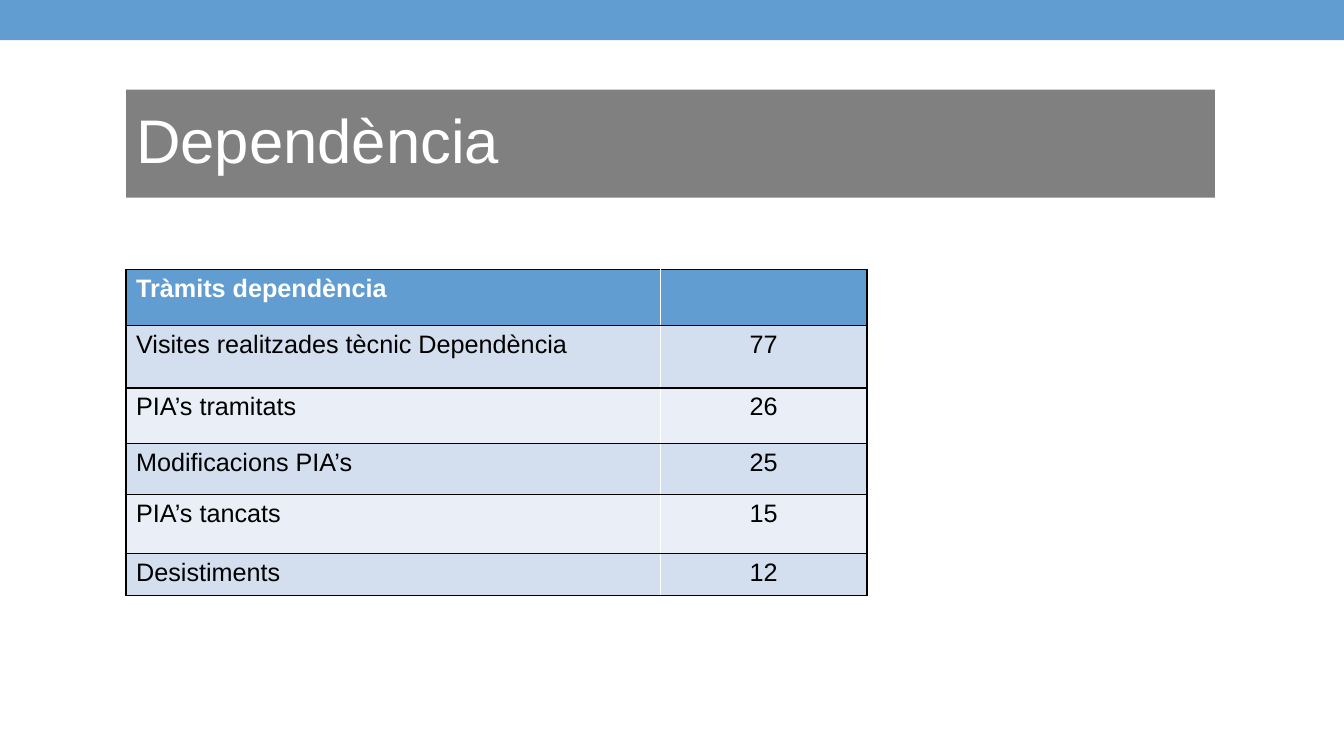
from lxml import etree
from pptx import Presentation
from pptx.dml.color import RGBColor
from pptx.enum.shapes import MSO_SHAPE
from pptx.enum.text import MSO_ANCHOR, PP_ALIGN
from pptx.oxml.ns import qn
from pptx.util import Inches, Pt

RECTANGLE = MSO_SHAPE.RECTANGLE
MIDDLE = MSO_ANCHOR.MIDDLE
LEFT, CENTER = PP_ALIGN.LEFT, PP_ALIGN.CENTER

FONT = "Arial"
BLUE, GRAY, WHITE, BLACK = "629DD1", "808080", "FFFFFF", "000000"
BANDS = ("EAEFF7", "D3DFEE")
COLUMN_WIDTHS = (5.3, 2.05)
ROW_HEIGHTS = (0.56, 0.62, 0.55, 0.51, 0.58, 0.42)
ROWS = (
    ("Tràmits dependència", ""),
    ("Visites realitzades tècnic Dependència", "77"),
    ("PIA’s tramitats", "26"),
    ("Modificacions PIA’s", "25"),
    ("PIA’s tancats", "15"),
    ("Desistiments", "12"),
)


def color(value):
    """Turn a hex string into a colour."""
    return RGBColor.from_string(value)


def paint(target, value):
    """Give a shape or cell a solid fill."""
    target.fill.solid()
    target.fill.fore_color.rgb = color(value)


def style_font(paragraph, size, value, bold=False):
    """Set the font of a paragraph."""
    font = paragraph.font
    font.name, font.size, font.bold = FONT, Pt(size), bold
    font.color.rgb = color(value)


def place(shape, box):
    """Move a shape to a box of left, top, width and height in inches."""
    shape.left, shape.top, shape.width, shape.height = map(Inches, box)


def add_band(page, box):
    """Draw the coloured band across the page."""
    band = page.shapes.add_shape(RECTANGLE, *map(Inches, box))
    band.shadow.inherit = False
    paint(band, BLUE)
    band.line.fill.background()


def fill_title(page, box, text):
    """Place and format the title."""
    title = page.shapes.title
    place(title, box)
    paint(title, GRAY)
    frame = title.text_frame
    frame.text = text
    frame.word_wrap = True
    frame.vertical_anchor = MIDDLE
    paragraph = frame.paragraphs[0]
    paragraph.alignment = LEFT
    paragraph.line_spacing = 0.9
    style_font(paragraph, 44, WHITE)


def set_borders(cell, sides):
    """Draw one-point cell borders from pairs of side and colour."""
    properties = cell._tc.get_or_add_tcPr()
    for side, value in sides:
        line = etree.SubElement(properties, qn(f"a:ln{side}"), w=str(Pt(1)))
        solid = etree.SubElement(line, qn("a:solidFill"))
        etree.SubElement(solid, qn("a:srgbClr"), val=value)


def add_procedures_table(page, box):
    """Build the table of procedures with its banded rows."""
    frame = page.shapes.add_table(len(ROWS), len(COLUMN_WIDTHS), *map(Inches, box))
    table = frame.table
    for column, width in zip(table.columns, COLUMN_WIDTHS):
        column.width = Inches(width)
    for row_index, (height, texts) in enumerate(zip(ROW_HEIGHTS, ROWS)):
        table.rows[row_index].height = Inches(height)
        is_header = row_index == 0
        for column_index, text in enumerate(texts):
            cell = table.cell(row_index, column_index)
            left, right = (BLACK, WHITE) if column_index == 0 else (WHITE, BLACK)
            set_borders(cell, zip("LRTB", (left, right, BLACK, BLACK)))
            paint(cell, BLUE if is_header else BANDS[row_index % 2])
            cell.text = text
            paragraph = cell.text_frame.paragraphs[0]
            paragraph.alignment = CENTER if column_index else LEFT
            style_font(paragraph, 18, WHITE if is_header else BLACK, is_header)


def main():
    """Build the deck and save it."""
    deck = Presentation()
    deck.slide_width, deck.slide_height = Inches(13.33), Inches(7.5)
    page = deck.slides.add_slide(deck.slide_layouts[5])
    add_band(page, (0, 0, 13.33, 0.4))
    fill_title(page, (1.25, 0.89, 10.8, 1.07), "Dependència")
    add_procedures_table(page, (1.25, 2.67, sum(COLUMN_WIDTHS), sum(ROW_HEIGHTS)))
    deck.save("out.pptx")


if __name__ == "__main__":
    main()
